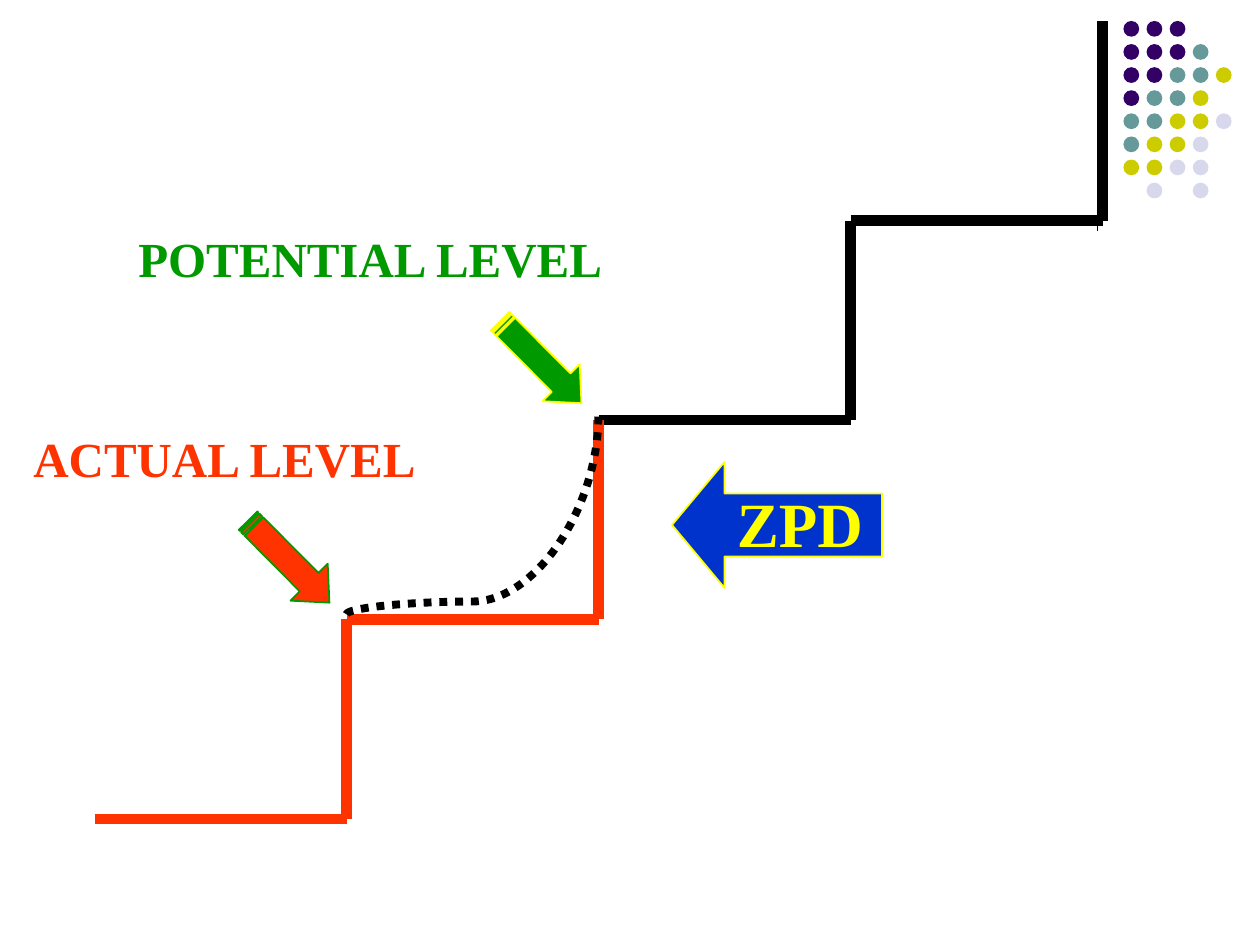
from dataclasses import dataclass

from lxml.etree import SubElement
from pptx import Presentation
from pptx.dml.color import RGBColor
from pptx.enum.dml import MSO_LINE
from pptx.enum.shapes import MSO_CONNECTOR, MSO_SHAPE
from pptx.enum.text import MSO_AUTO_SIZE
from pptx.oxml.ns import qn
from pptx.util import Emu, Pt

PX = 914400 // 120  # 120 px to the inch


@dataclass(frozen=True)
class Theme:
    black: str = "000000"
    red: str = "FF3300"
    green: str = "009900"
    yellow: str = "FFFF00"
    blue: str = "0033CC"
    purple: str = "330066"
    teal: str = "669999"
    olive: str = "CCCC00"
    lavender: str = "D8D8EC"
    font: str = "Times New Roman"
    label_size: int = 28
    zone_size: int = 36
    stair_width: float = 6
    curve_width: float = 4.5
    outline_width: float = 1
    rule_width: float = 0.75


THEME = Theme()

DOT_COLOURS = {"P": THEME.purple, "T": THEME.teal,
               "O": THEME.olive, "L": THEME.lavender}
DOT_ROWS = ["PPP", "PPPT", "PPTTO", "PTTO", "TTOOL", "TOOL", "OOLL", " L L"]

STEP_WIDTH, STEP_HEIGHT = 240, 190
STAIR_LEFT, STAIR_BOTTOM = 90, 780


def px(*lengths):
    return [Emu(length * PX) for length in lengths]


def rgb(colour):
    return RGBColor.from_string(colour)


def add_line(shapes, start, end, colour, width, kind=MSO_CONNECTOR.STRAIGHT):
    connector = shapes.add_connector(kind, *px(*start, *end))
    connector.line.color.rgb = rgb(colour)
    connector.line.width = Pt(width)
    SubElement(connector._element.spPr, qn("a:effectLst"))
    return connector


def add_filled(shapes, kind, box, fill, outline=None, adjustments=(), rotation=0):
    shape = shapes.add_shape(kind, *px(*box))
    shape.shadow.inherit = False
    shape.fill.solid()
    shape.fill.fore_color.rgb = rgb(fill)
    if outline:
        shape.line.color.rgb = rgb(outline)
        shape.line.width = Pt(THEME.outline_width)
    else:
        shape.line.fill.background()
    for index, value in enumerate(adjustments):
        shape.adjustments[index] = value
    shape.rotation = rotation


def add_label(shapes, text, box, colour, size):
    frame = shapes.add_textbox(*px(*box)).text_frame
    frame.word_wrap = True
    frame.auto_size = MSO_AUTO_SIZE.SHAPE_TO_FIT_TEXT
    run = frame.paragraphs[0].add_run()
    run.text = text
    run.font.name = THEME.font
    run.font.size = Pt(size)
    run.font.bold = True
    run.font.color.rgb = rgb(colour)


def add_dots(slide):
    shapes = slide.shapes.add_group_shape().shapes
    left, top, pitch, size = 1070, 20, 22, 15
    for row, codes in enumerate(DOT_ROWS):
        for column, code in enumerate(codes):
            if code in DOT_COLOURS:
                box = (left + column * pitch, top + row * pitch, size, size)
                add_filled(shapes, MSO_SHAPE.OVAL, box, DOT_COLOURS[code])


def add_stairs(slide, first, last, colour):
    for step in range(first, last):
        left = STAIR_LEFT + step * STEP_WIDTH
        bottom = STAIR_BOTTOM - step * STEP_HEIGHT
        right, top = left + STEP_WIDTH, bottom - STEP_HEIGHT
        for start, end in [((left, bottom), (right, bottom)),
                           ((right, bottom), (right, top))]:
            add_line(slide.shapes, start, end, colour, THEME.stair_width)


def add_growth_curve(slide):
    # The frame stands upright, then turns a quarter to the left
    curve = add_line(slide.shapes, (355, 370), (545, 610), THEME.black,
                     THEME.curve_width, MSO_CONNECTOR.CURVE)
    curve.line.dash_style = MSO_LINE.ROUND_DOT
    properties = curve._element.spPr
    properties.find(qn("a:xfrm")).set("rot", str(270 * 60000))
    guides = properties.find(qn("a:prstGeom")).find(qn("a:avLst"))
    SubElement(guides, qn("a:gd"), name="adj1", fmla="val 6400")


def add_level(slide, text, label_at, arrow_at, colour, outline):
    add_filled(slide.shapes, MSO_SHAPE.STRIPED_RIGHT_ARROW, (*arrow_at, 110, 50),
               colour, outline, (0.5, 0.55), 45.2)
    add_label(slide.shapes, text, (*label_at, 480, 68), colour, THEME.label_size)


def add_zone(slide):
    shapes = slide.shapes.add_group_shape().shapes
    add_filled(shapes, MSO_SHAPE.LEFT_ARROW, (640, 440, 200, 120),
               THEME.blue, THEME.yellow, (0.5, 0.417))
    add_label(shapes, "ZPD", (690, 456, 270, 84), THEME.yellow, THEME.zone_size)


def main():
    presentation = Presentation()
    presentation.slide_width, presentation.slide_height = px(1200, 900)
    slide = presentation.slides.add_slide(presentation.slide_layouts[6])

    # Corner decoration
    add_line(slide.shapes, (1045, 20), (1045, 220), THEME.black, THEME.rule_width)
    add_dots(slide)

    # Staircase: steps still ahead, then steps within reach
    add_stairs(slide, 2, 4, THEME.black)
    add_stairs(slide, 0, 2, THEME.red)

    # Levels and the zone between them
    add_level(slide, "ACTUAL LEVEL", (20, 402), (220, 510), THEME.red, THEME.green)
    add_level(slide, "POTENTIAL LEVEL", (120, 212), (460, 320),
              THEME.green, THEME.yellow)
    add_growth_curve(slide)
    add_zone(slide)

    presentation.save("out.pptx")


if __name__ == "__main__":
    main()
